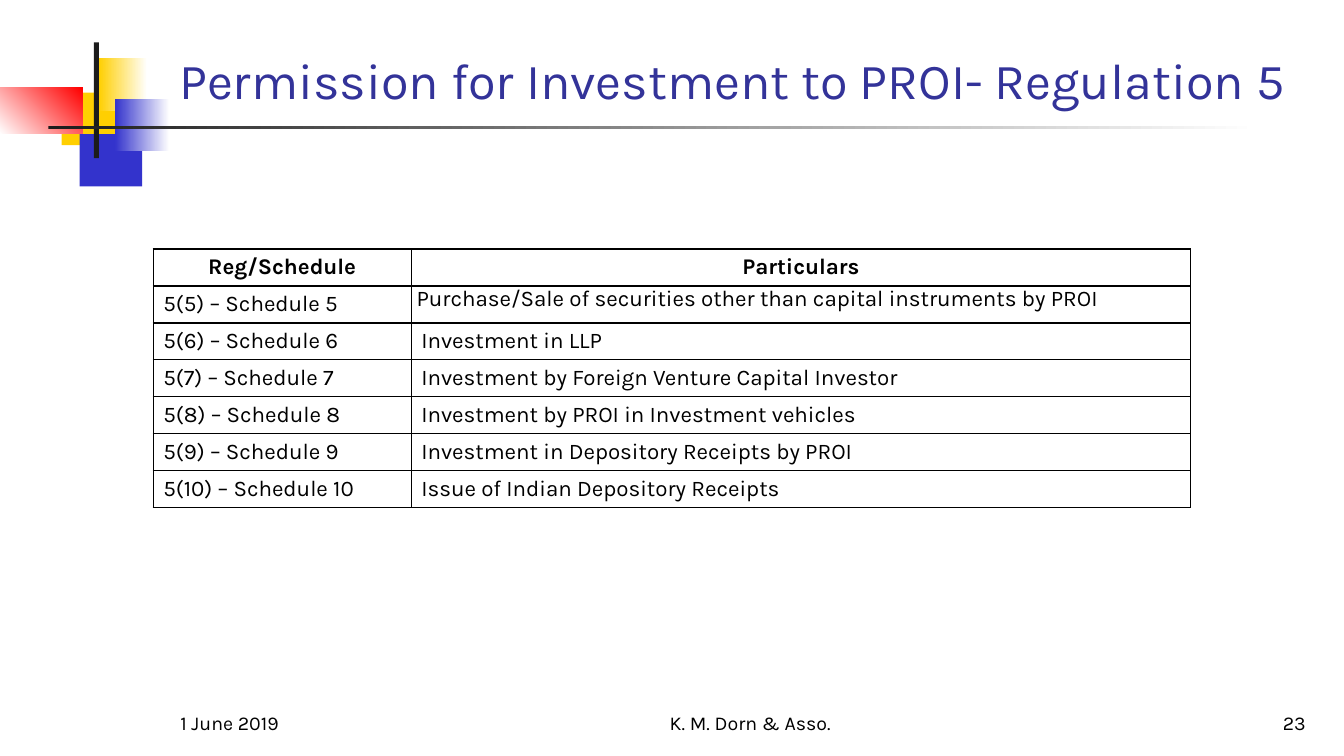
from dataclasses import dataclass

from lxml import etree
from pptx import Presentation
from pptx import util as u
from pptx.dml.color import RGBColor
from pptx.enum import shapes, text
from pptx.oxml import ns


@dataclass(frozen=True)
class Theme:
    font: str = "Karla"
    title: str = "333399"
    ink: str = "000000"
    paper: str = "FFFFFF"
    yellow: str = "FFCF01"
    blue: str = "3333CC"
    red: str = "FF0000"
    charcoal: str = "1C1C1C"
    title_size: int = 36
    table_size: int = 16
    footer_size: int = 14
    border: float = 1


LEFT, CENTER, RIGHT = text.PP_ALIGN.LEFT, text.PP_ALIGN.CENTER, text.PP_ALIGN.RIGHT


class Deck:
    """Holds the theme and current slide; lengths are percent of slide size."""

    def __init__(self, theme):
        self.theme = theme
        self.prs = Presentation()
        self.prs.slide_width, self.prs.slide_height = u.Inches(13.33), u.Inches(7.5)
        self.s = self.prs.slides.add_slide(self.prs.slide_layouts[6])

    def x(self, share):
        return round(self.prs.slide_width * share / 100)

    def y(self, share):
        return round(self.prs.slide_height * share / 100)

    def box(self, left, top, width, height):
        return self.x(left), self.y(top), self.x(width), self.y(height)

    def style(self, p, size, color, align=LEFT, bold=False):
        p.alignment = align
        p.font.name, p.font.size, p.font.bold = self.theme.font, u.Pt(size), bold
        p.font.color.rgb = RGBColor.from_string(color)

    def block(self, area, *colors, angle=0):
        """Draw a rectangle in one colour, or fading between two."""
        sp = self.s.shapes.add_shape(shapes.MSO_SHAPE.RECTANGLE, *self.box(*area))
        sp.shadow.inherit = False
        sp.line.fill.background()
        if len(colors) == 1:
            sp.fill.solid()
            sp.fill.fore_color.rgb = RGBColor.from_string(colors[0])
            return
        sp.fill.gradient()
        sp.fill.gradient_angle = angle
        for stop, color in zip(sp.fill.gradient_stops, colors):
            stop.color.rgb = RGBColor.from_string(color)

    def label(self, area, words, size, color, align=LEFT):
        tf = self.s.shapes.add_textbox(*self.box(*area)).text_frame
        tf.word_wrap = True
        tf.vertical_anchor = text.MSO_ANCHOR.BOTTOM
        tf.text = words
        self.style(tf.paragraphs[0], size, color, align)

    def outline(self, cell):
        tc_pr = cell._tc.get_or_add_tcPr()
        for i, side in enumerate(("lnL", "lnR", "lnT", "lnB")):
            ln = etree.Element(ns.qn(f"a:{side}"), w=str(u.Pt(self.theme.border)))
            fill = etree.SubElement(ln, ns.qn("a:solidFill"))
            etree.SubElement(fill, ns.qn("a:srgbClr"), val=self.theme.ink)
            tc_pr.insert(i, ln)

    def table(self, left, top, widths, row_height, rows):
        area = self.box(left, top, sum(widths), row_height * len(rows))
        table = self.s.shapes.add_table(len(rows), len(widths), *area).table
        table.first_row = table.horz_banding = False
        for column, width in zip(table.columns, widths):
            column.width = self.x(width)
        for r, row in enumerate(rows):
            table.rows[r].height = self.y(row_height)
            for c, words in enumerate(row):
                cell = table.cell(r, c)
                cell.text = words
                cell.fill.solid()
                cell.fill.fore_color.rgb = RGBColor.from_string(self.theme.paper)
                self.outline(cell)
                self.style(cell.text_frame.paragraphs[0], self.theme.table_size,
                           self.theme.ink, LEFT if r else CENTER, bold=r == 0)
        return table


def main():
    t = Theme()
    deck = Deck(t)

    tile = 6.93
    deck.block((4.58, 12.27, 4.8, tile), t.yellow)
    deck.block((5.93, 17.73, 4.65, tile), t.blue)
    deck.block((7.35, 7.73, 3.6, tile), t.yellow, t.paper)
    deck.block((8.55, 13.07, 4.05, tile), t.blue, t.paper)
    deck.block((0, 11.6, 6.15, 6.13), t.paper, t.red, angle=45)
    deck.block((6.98, 5.6, 0.38, 15.33), t.charcoal)
    deck.block((3.6, 16.67, 90, 0.4), t.charcoal, t.paper)

    deck.label((12.6, 3.07, 85.22, 12.13),
               "Permission for Investment to PROI- Regulation 5", t.title_size, t.title)

    particulars = (
        "Purchase/Sale of securities other than capital instruments by PROI",
        "Investment in LLP",
        "Investment by Foreign Venture Capital Investor",
        "Investment by PROI in Investment vehicles",
        "Investment in Depository Receipts by PROI",
        "Issue of Indian Depository Receipts",
    )
    rows = [("Reg/Schedule", "Particulars")]
    rows += [(f"5({n}) – Schedule {n}", words) for n, words in enumerate(particulars, 5)]
    table = deck.table(11.4, 32.93, (19.2, 58), 4.83, rows)
    purchase = table.cell(1, 1)
    purchase.margin_top = purchase.margin_right = purchase.margin_bottom = 0
    purchase.margin_left = deck.x(0.4)

    footers = (
        (12.68, 20.86, "1 June 2019", LEFT),
        (40, 31.66, "K. M. Dorn & Asso.", CENTER),
        (77.04, 20.86, "23", RIGHT),
    )
    for left, width, words, align in footers:
        deck.label((left, 91.07, width, 6.67), words, t.footer_size, t.ink, align)

    deck.prs.save("out.pptx")


if __name__ == "__main__":
    main()
